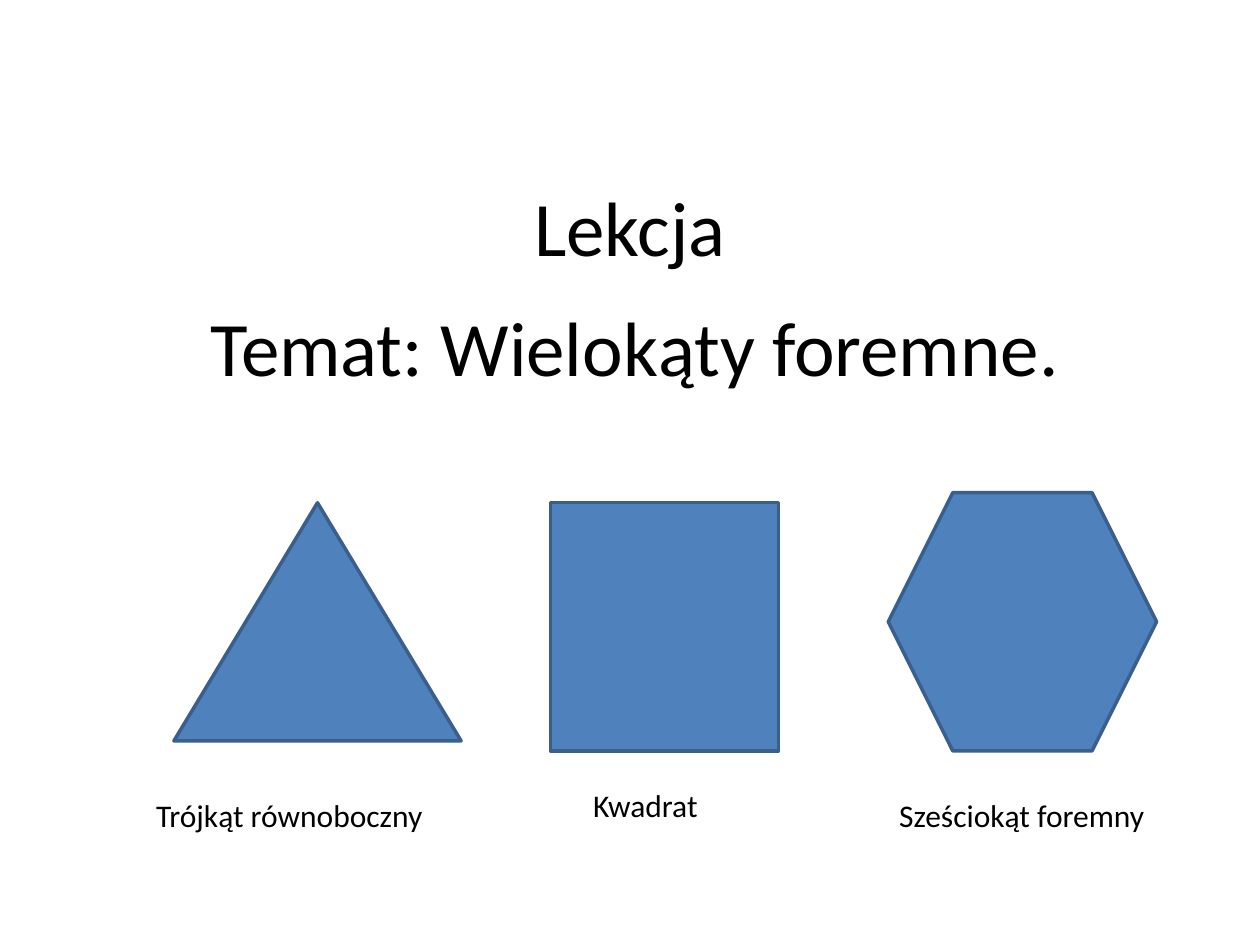
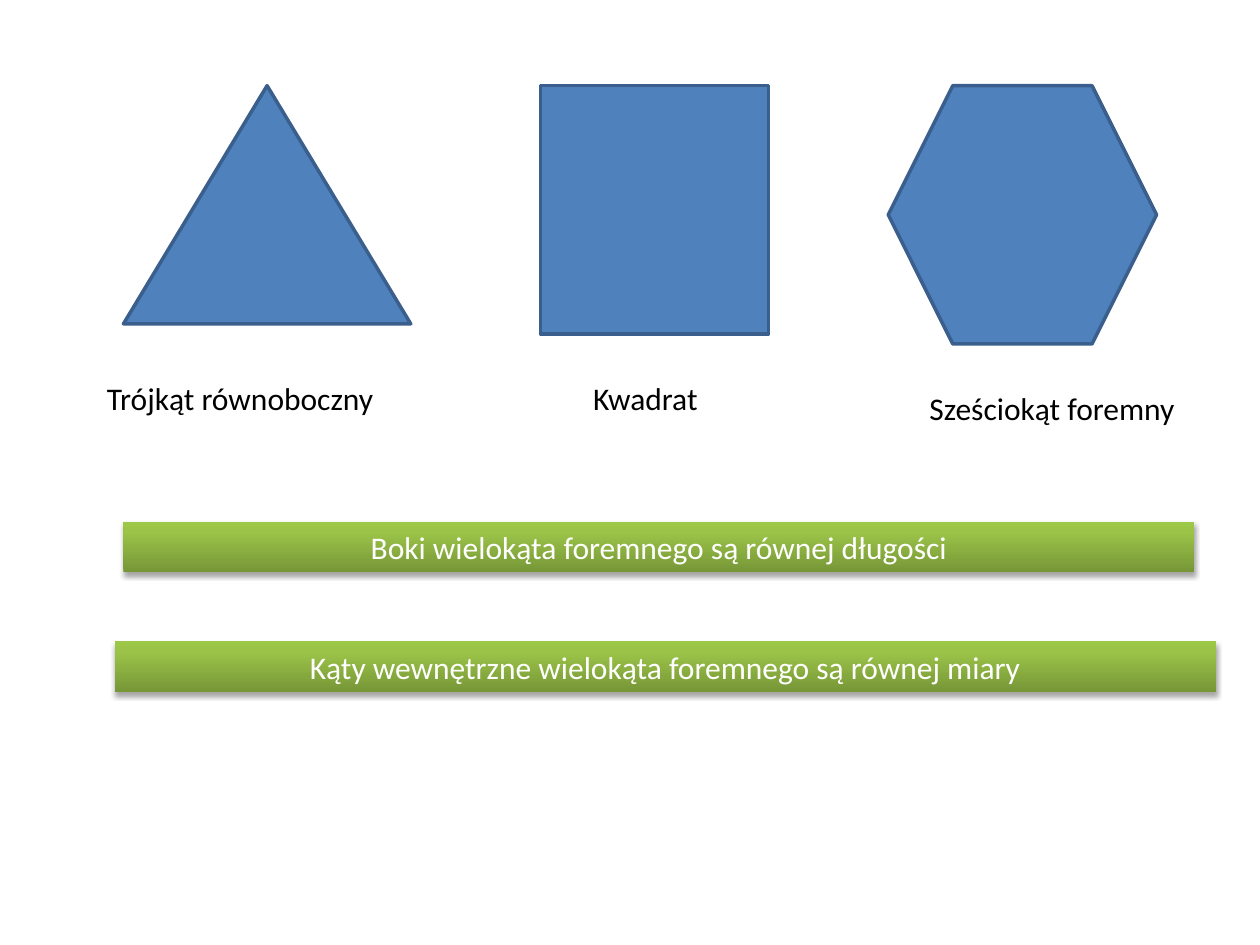
from copy import deepcopy
from dataclasses import dataclass

from lxml import etree
from pptx import Presentation
from pptx.dml.color import RGBColor
from pptx.enum.shapes import MSO_SHAPE
from pptx.enum.text import MSO_ANCHOR, MSO_AUTO_SIZE, PP_ALIGN
from pptx.oxml.ns import qn
from pptx.util import Inches, Pt

TRIANGLE = MSO_SHAPE.ISOSCELES_TRIANGLE
RECTANGLE = MSO_SHAPE.RECTANGLE
HEXAGON = MSO_SHAPE.HEXAGON
LEFT, CENTER = PP_ALIGN.LEFT, PP_ALIGN.CENTER
TOP, MIDDLE = MSO_ANCHOR.TOP, MSO_ANCHOR.MIDDLE
FIT_SHAPE = MSO_AUTO_SIZE.SHAPE_TO_FIT_TEXT


@dataclass(frozen=True)
class Theme:
    font: str = "Calibri"
    title_size: int = 44
    label_size: int = 18
    text: str = "000000"
    light_text: str = "FFFFFF"
    polygon_fill: str = "4F81BD"
    polygon_line: str = "3A5F8C"
    band_stops: tuple = ((0, "779737"), (0.8, "9BC348"), (1, "9DC746"))


THEME = Theme()


def write_text(shape, text, size, color, align, **frame_format):
    frame = shape.text_frame
    frame.word_wrap = True
    for name, value in frame_format.items():
        setattr(frame, name, value)
    para = frame.paragraphs[0]
    para.alignment = align
    span = para.add_run()
    span.text = text
    span.font.color.rgb = RGBColor.from_string(color)
    for name, value in {"name": THEME.font, "size": Pt(size)}.items():
        setattr(span.font, name, value)


def style_band(band):
    """Give a band its three-stop gradient and soft shadow below."""
    band.line.fill.background()
    band.fill.gradient()
    band.fill.gradient_angle = 90
    stop_list = band._element.spPr.find(".//" + qn("a:gsLst"))
    stop_list.insert(1, deepcopy(stop_list[0]))
    for stop, (position, color) in zip(band.fill.gradient_stops, THEME.band_stops):
        stop.position = position
        stop.color.rgb = RGBColor.from_string(color)

    band.shadow.inherit = False
    effects = band._element.spPr.find(qn("a:effectLst"))
    shadow = etree.SubElement(effects, qn("a:outerShdw"), blurRad=str(Pt(3.1)),
                              dist=str(Pt(1.8)), dir="5400000", rotWithShape="0")
    shadow_color = etree.SubElement(shadow, qn("a:srgbClr"), val="000000")
    etree.SubElement(shadow_color, qn("a:alpha"), val="35000")


deck = Presentation()
deck.slide_width, deck.slide_height = Inches(10), Inches(7.5)
title_slide = deck.slides.add_slide(deck.slide_layouts[0])
rules_slide = deck.slides.add_slide(deck.slide_layouts[6])

# Lesson title and topic
headings = [
    (title_slide.shapes.title, "Lekcja", (0.75, 0.99, 8.5, 1.61), MIDDLE),
    (title_slide.placeholders[1], "Temat: Wielokąty foremne.", (1.54, 2.33, 7, 1.92), TOP),
]
for box, text, place, anchor in headings:
    box.left, box.top, box.width, box.height = map(Inches, place)
    write_text(box, text, THEME.title_size, THEME.text, CENTER, vertical_anchor=anchor)

# Regular polygons: kind, size, name, label width, label alignment
polygons = [
    (TRIANGLE, (2.28, 1.89), "Trójkąt równoboczny", 2.76, LEFT),
    (RECTANGLE, (1.81, 1.97), "Kwadrat", 2.05, LEFT),
    (HEXAGON, (2.13, 2.05), "Sześciokąt foremny", 2.6, CENTER),
]
# For each slide, the corners of every polygon and of its label
polygon_rows = [
    (title_slide, [(1.38, 3.99), (4.37, 3.99), (7.05, 3.91)],
     [(1.14, 6.27), (4.61, 6.19), (6.81, 6.27)]),
    (rules_slide, [(0.98, 0.68), (4.29, 0.68), (7.05, 0.68)],
     [(0.75, 2.96), (4.61, 2.96), (7.05, 3.04)]),
]
for page, polygon_corners, label_corners in polygon_rows:
    for (kind, size, *_), corner in zip(polygons, polygon_corners):
        polygon = page.shapes.add_shape(kind, *map(Inches, corner + size))
        polygon.shadow.inherit = False
        polygon.fill.solid()
        polygon.fill.fore_color.rgb = RGBColor.from_string(THEME.polygon_fill)
        polygon.line.color.rgb = RGBColor.from_string(THEME.polygon_line)
        polygon.line.width = Pt(2)
    for (*_, name, width, align), corner in zip(polygons, label_corners):
        label = page.shapes.add_textbox(*map(Inches, (*corner, width, 0.4)))
        write_text(label, name, THEME.label_size, THEME.text, align, auto_size=FIT_SHAPE)

# Properties of regular polygons
bands = [
    ("Boki wielokąta foremnego są równej długości", (0.98, 4.14, 8.5, 0.4)),
    ("Kąty wewnętrzne wielokąta foremnego są równej miary", (0.91, 5.09, 8.74, 0.4)),
]
for text, place in bands:
    band = rules_slide.shapes.add_shape(RECTANGLE, *map(Inches, place))
    style_band(band)
    write_text(band, text, THEME.label_size, THEME.light_text, CENTER,
               auto_size=FIT_SHAPE, vertical_anchor=TOP)

deck.save("out.pptx")
